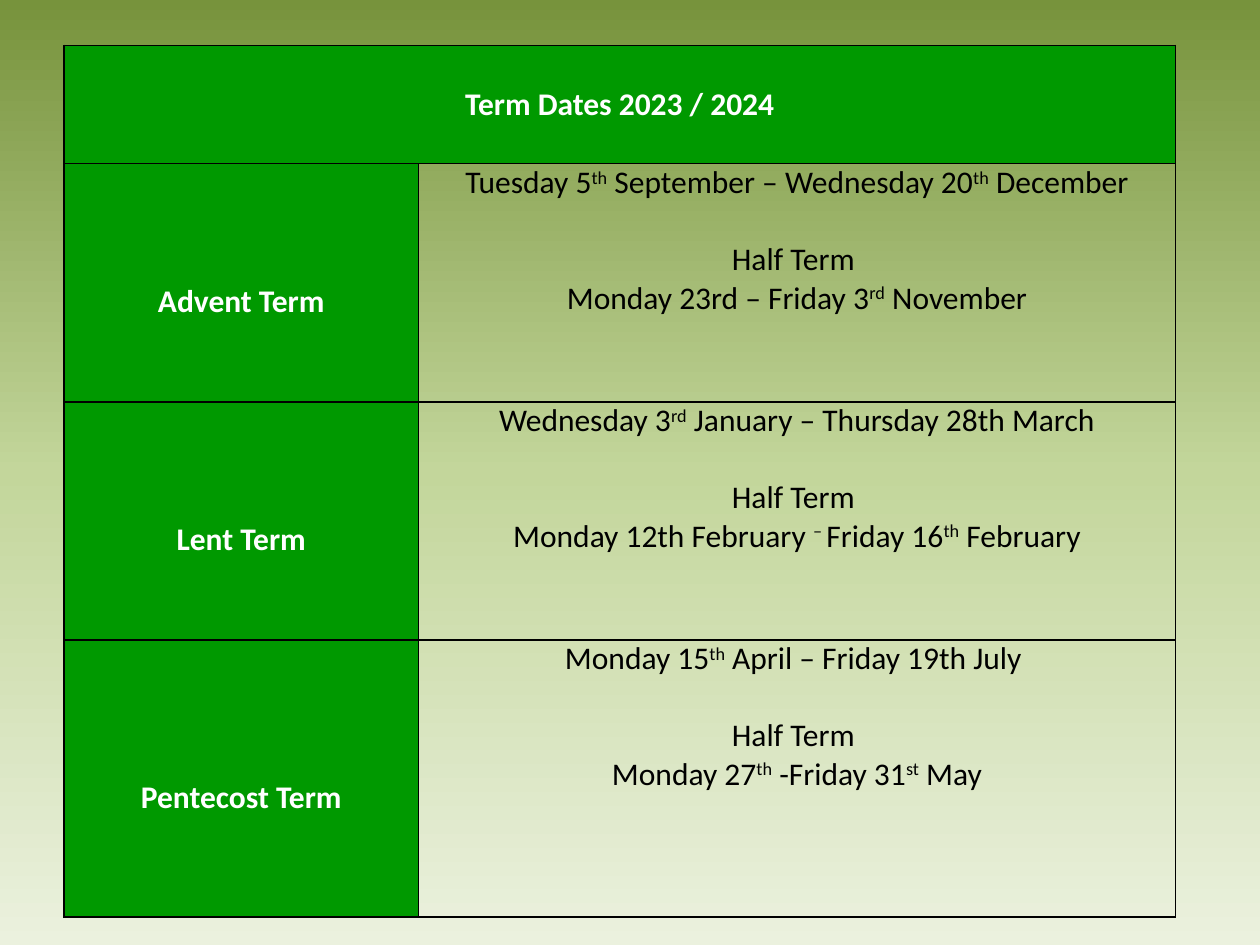
from copy import deepcopy
from dataclasses import dataclass

from lxml.etree import SubElement
from pptx import Presentation
from pptx.dml.color import RGBColor
from pptx.enum.text import MSO_ANCHOR as Anchor, PP_ALIGN as Align
from pptx.oxml.ns import qn
from pptx.slide import Slide
from pptx.table import _Cell as Cell
from pptx.util import Inches, Pt

COLORS = {
    "green": "009900",
    "white": "FFFFFF",
    "black": "000000",
    "background_top": "77933C",
    "background_middle": "C3D69B",
    "background_bottom": "EBF1DE",
}
HEADING_FORMAT = {"name": "Calibri", "size": Pt(18), "bold": True}
DATE_FORMAT = {"name": "Calibri", "size": Pt(18), "bold": False}
MARGINS = {
    "margin_left": Inches(0.07),
    "margin_right": Inches(0.07),
    "margin_top": 0,
    "margin_bottom": 0,
}
COLUMN_WIDTHS = (2.81, 6.01)
ROW_HEIGHTS = (0.94, 1.89, 1.89, 2.2)


@dataclass
class Term:
    name: str
    dates: str
    half_term: str


# Text between carets is superscript.
TERMS = [
    Term("Advent Term",
         "Tuesday 5^th^ September – Wednesday 20^th^ December",
         "Monday 23rd – Friday 3^rd^ November"),
    Term("Lent Term",
         "Wednesday 3^rd^ January – Thursday 28th March",
         "Monday 12th February ^– ^Friday 16^th^ February"),
    Term("Pentecost Term",
         "Monday 15^th^ April – Friday 19th July ",
         "Monday 27^th^ -Friday 31^st^ May"),
]


def color(name: str) -> RGBColor:
    return RGBColor.from_string(COLORS[name])


def paint_background(slide: Slide) -> None:
    fill = slide.background.fill
    fill.gradient()
    fill.gradient_angle = 270
    stop_list = next(slide.element.iter(qn("a:gsLst")))
    stop_list.append(deepcopy(stop_list[-1]))
    names = ("background_top", "background_middle", "background_bottom")
    for stop, name, position in zip(fill.gradient_stops, names, (0, 0.5, 1)):
        stop.color.rgb = color(name)
        stop.position = position


def add_borders(cell: Cell) -> None:
    """Draw a 1 pt black line on each side; lines must precede the fill."""
    properties = cell._tc.get_or_add_tcPr()
    for side in ("a:lnL", "a:lnR", "a:lnT", "a:lnB"):
        line = SubElement(properties, qn(side), w=str(Pt(1)))
        solid = SubElement(line, qn("a:solidFill"))
        SubElement(solid, qn("a:srgbClr"), val=COLORS["black"])


def write_cell(cell: Cell, lines: list[str], font_format: dict,
               text_color: str, anchor: Anchor) -> None:
    for name, value in MARGINS.items():
        setattr(cell, name, value)
    cell.vertical_anchor = anchor
    for index, line in enumerate(lines):
        frame = cell.text_frame
        paragraph = frame.add_paragraph() if index else frame.paragraphs[0]
        paragraph.alignment = Align.CENTER
        for part, text in enumerate(line.split("^")):
            run = paragraph.add_run()
            run.text = text
            for name, value in font_format.items():
                setattr(run.font, name, value)
            run.font.color.rgb = color(text_color)
            if part % 2:
                run._r.get_or_add_rPr().set("baseline", "30000")


def write_heading(cell: Cell, text: str) -> None:
    write_cell(cell, [text], HEADING_FORMAT, "white", Anchor.MIDDLE)
    cell.fill.solid()
    cell.fill.fore_color.rgb = color("green")


def write_term(label: Cell, dates: Cell, term: Term) -> None:
    write_heading(label, term.name)
    label.text_frame.paragraphs[0].line_spacing = 2.0
    write_cell(dates, [term.dates, "Half Term ", term.half_term],
               DATE_FORMAT, "black", Anchor.TOP)
    dates.text_frame.paragraphs[1].space_before = Pt(22)
    dates.fill.background()


def add_term_table(slide: Slide) -> None:
    table = slide.shapes.add_table(
        len(ROW_HEIGHTS), len(COLUMN_WIDTHS), Inches(0.51), Inches(0.36),
        Inches(sum(COLUMN_WIDTHS)), Inches(sum(ROW_HEIGHTS))).table
    table.first_row = table.horz_banding = False
    for column, width in zip(table.columns, COLUMN_WIDTHS):
        column.width = Inches(width)
    for row, height in zip(table.rows, ROW_HEIGHTS):
        row.height = Inches(height)
    for cell in table.iter_cells():
        add_borders(cell)
    table.cell(0, 0).merge(table.cell(0, 1))
    write_heading(table.cell(0, 0), "Term Dates 2023 / 2024")
    for row, term in enumerate(TERMS, start=1):
        write_term(table.cell(row, 0), table.cell(row, 1), term)


def main() -> None:
    presentation = Presentation()
    presentation.slide_width = Inches(10)
    presentation.slide_height = Inches(7.5)
    slide = presentation.slides.add_slide(presentation.slide_layouts[6])
    paint_background(slide)
    add_term_table(slide)
    presentation.save("out.pptx")


if __name__ == "__main__":
    main()
